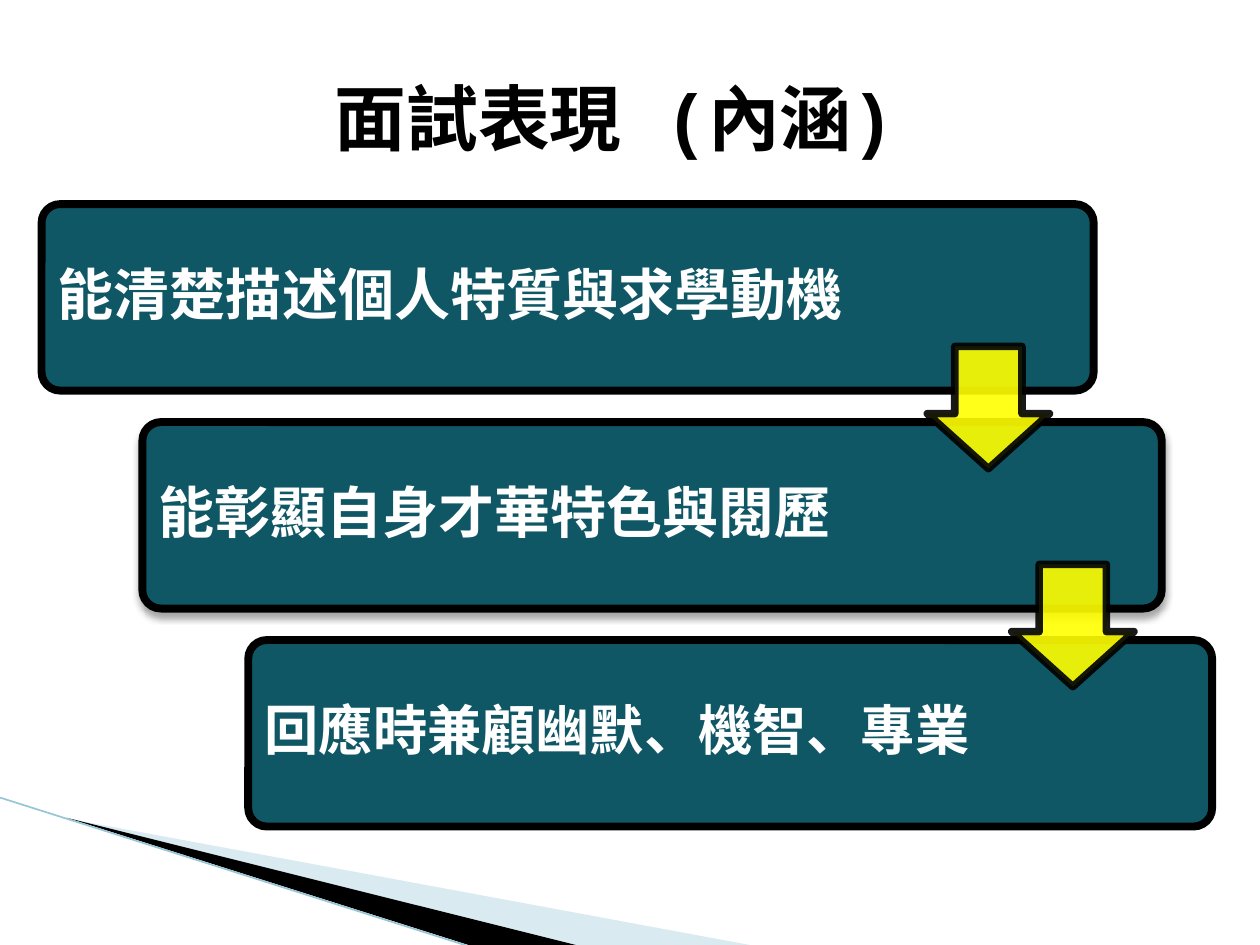
from lxml import etree
from pptx import Presentation
from pptx.dml.color import RGBColor
from pptx.enum.shapes import MSO_CONNECTOR, MSO_SHAPE
from pptx.enum.text import MSO_ANCHOR, PP_ALIGN
from pptx.oxml.ns import qn
from pptx.util import Inches, Pt

ROUND, ARROW = MSO_SHAPE.ROUNDED_RECTANGLE, MSO_SHAPE.DOWN_ARROW
STRAIGHT = MSO_CONNECTOR.STRAIGHT
MIDDLE = MSO_ANCHOR.MIDDLE
LEFT, CENTER = PP_ALIGN.LEFT, PP_ALIGN.CENTER

BLACK = RGBColor(0x00, 0x00, 0x00)
WHITE = RGBColor(0xFF, 0xFF, 0xFF)
TEAL = RGBColor(0x10, 0x57, 0x66)
YELLOW = RGBColor(0xFF, 0xFF, 0x00)
PALE = RGBColor(0xA0, 0xCB, 0xDC)
SKY = RGBColor(0x97, 0xC5, 0xD8)
FONT = "Courier New"

# Left, width, text, size, shadow
STEPS = [
    (0.33, 8.35, "能清楚描述個人特質與求學動機", 32, False),
    (1.13, 8.09, "能彰顯自身才華特色與閱歷", 32, True),
    (1.97, 7.65, "回應時兼顧幽默、機智、專業", 31, False),
]
ARROWS = [7.36, 8.03]
TOP, HIGH, PITCH = 1.62, 1.48, 1.73


def add(parent, tag, **attrs):
    node = etree.SubElement(parent, qn(tag))
    for key, value in attrs.items():
        node.set(key, str(value))
    return node


def fade(fill, percent):
    """Set the opacity of a solid fill."""
    color = fill._xPr.find(qn("a:solidFill"))[0]
    add(color, "a:alpha", val=percent * 1000)


def paint(shape, fill, line=None, width=0, alpha=100):
    shape.shadow.inherit = False
    shape.fill.solid()
    shape.fill.fore_color.rgb = fill
    if line is None:
        shape.line.fill.background()
    else:
        shape.line.color.rgb = line
        shape.line.width = Pt(width)
        add(shape.line._ln, "a:round")
    if alpha < 100:
        fade(shape.fill, alpha)
        if line is not None:
            fade(shape.line.fill, alpha)


def cast(shape):
    """Give a soft shadow below the shape."""
    effects = shape._element.spPr.find(qn("a:effectLst"))
    outer = add(effects, "a:outerShdw", blurRad=Pt(4), dist=Pt(3),
                dir=90 * 60000, rotWithShape=0)
    color = add(outer, "a:srgbClr", val=BLACK)
    add(color, "a:alpha", val=35000)


def write(slide, box, text, size, color, align=LEFT, inset=(0.1, 0.05),
          spacing=None):
    frame = slide.shapes.add_textbox(*map(Inches, box)).text_frame
    frame.word_wrap = True
    frame.vertical_anchor = MIDDLE
    frame.margin_left = frame.margin_right = Inches(inset[0])
    frame.margin_top = frame.margin_bottom = Inches(inset[1])
    para = frame.paragraphs[0]
    para.alignment = align
    if spacing:
        para.line_spacing = spacing
    run = para.add_run()
    run.text = text
    font = run.font
    font.size, font.bold, font.name = Pt(size), True, FONT
    font.color.rgb = color
    add(run._r.get_or_add_rPr(), "a:ea", typeface=FONT)


def wedge(slide, points, fill, alpha=100):
    start, *rest = [(Inches(x), Inches(y)) for x, y in points]
    build = slide.shapes.build_freeform(*start)
    build.add_line_segments(rest, close=True)
    paint(build.convert_to_shape(), fill, alpha=alpha)


def corner(slide, left, top):
    """Sweeping wedges in the lower left corner."""
    def shift(*points):
        return [(left + x, top + y) for x, y in points]

    wedge(slide, shift((0.55, 0.17), (5.95, 1.17), (4.56, 1.17)), PALE, 40)
    wedge(slide, shift((0.53, 0.16), (4.57, 1.17), (3.72, 1.17)), BLACK)
    ends = shift((0, 0), (3.72, 1.18))
    line = slide.shapes.add_connector(
        STRAIGHT, *(Inches(v) for point in ends for v in point))
    line.line.color.rgb = SKY
    line.line.width = Pt(0.95)
    add(line._element.spPr, "a:effectLst")


def step(slide, box, text, size, shadow):
    """Rounded panel with its text in the left four fifths."""
    left, top, width, height = box
    panel = slide.shapes.add_shape(ROUND, *map(Inches, box))
    panel.adjustments[0] = 0.1
    paint(panel, TEAL, BLACK, 4.5)
    if shadow:
        cast(panel)
    write(slide, (left, top, width * 0.8, height), text, size, WHITE,
          inset=(0.13, 0.13), spacing=0.9)


def arrow(slide, left, top, side=0.97):
    shape = slide.shapes.add_shape(
        ARROW, *map(Inches, (left, top, side, side)))
    shape.adjustments[0], shape.adjustments[1] = 0.55, 0.45
    paint(shape, YELLOW, BLACK, 4.33, alpha=90)


def main():
    deck = Presentation()
    deck.slide_width, deck.slide_height = Inches(10), Inches(7.5)
    slide = deck.slides.add_slide(deck.slide_layouts[6])
    corner(slide, 0, 6.33)
    # Staggered steps
    for i, (left, width, text, size, shadow) in enumerate(STEPS):
        step(slide, (left, TOP + i * PITCH, width, HIGH), text, size, shadow)
    # Arrows bridging the gaps
    for i, left in enumerate(ARROWS):
        arrow(slide, left, TOP + 1.13 + i * PITCH)
    # Title
    write(slide, (0.78, 0.3, 8.2, 1.25), "面試表現 (內涵)", 41, BLACK, CENTER)
    deck.save("out.pptx")


if __name__ == "__main__":
    main()
